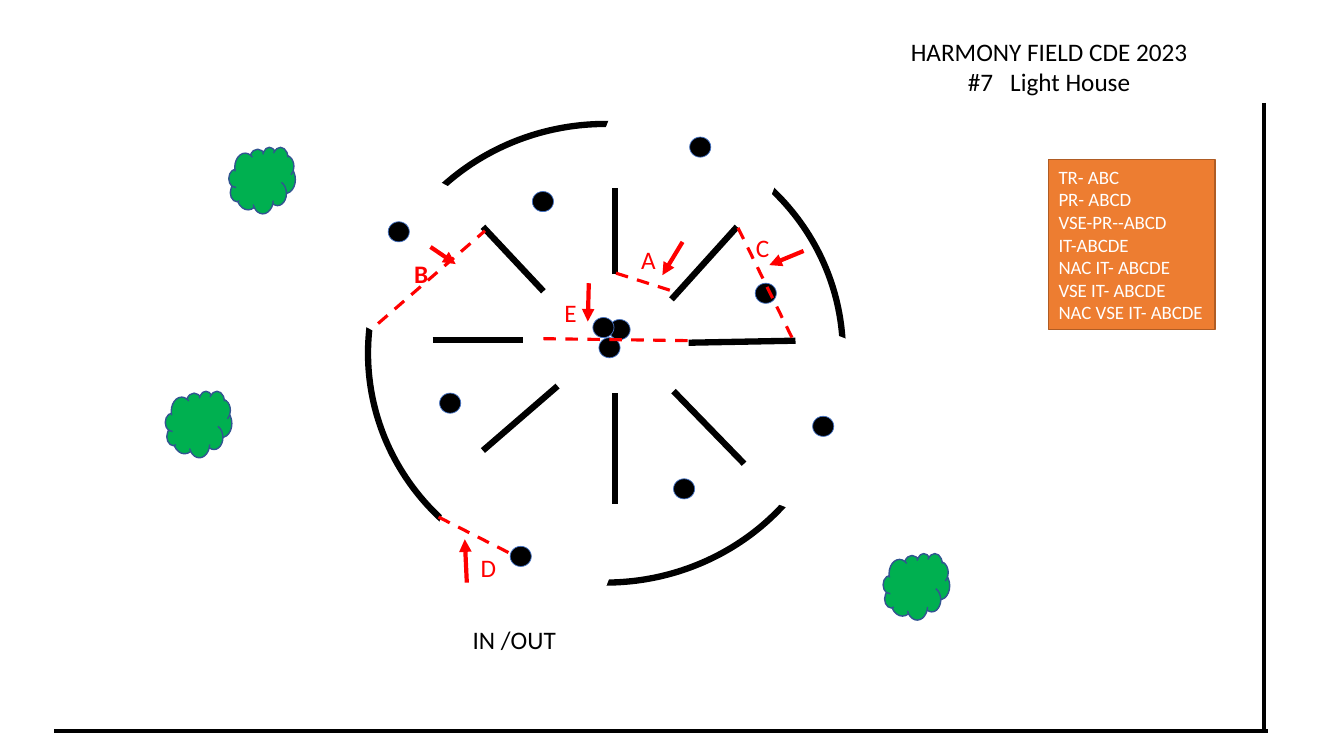
from dataclasses import dataclass

from lxml.etree import SubElement
from pptx import Presentation
from pptx.dml.color import RGBColor as RGB
from pptx.enum.dml import MSO_LINE
from pptx.enum.shapes import MSO_CONNECTOR as CONNECTOR
from pptx.enum.shapes import MSO_SHAPE as SHAPE
from pptx.enum.text import MSO_ANCHOR as ANCHOR
from pptx.enum.text import MSO_AUTO_SIZE as AUTO_SIZE
from pptx.enum.text import PP_ALIGN as ALIGN
from pptx.oxml.ns import qn
from pptx.util import Inches, Pt


@dataclass(frozen=True)
class Theme:
    font: str = "Calibri"
    black: RGB = RGB(0, 0, 0)
    white: RGB = RGB(255, 255, 255)
    red: RGB = RGB(255, 0, 0)
    green: RGB = RGB(0, 0xB0, 0x50)
    tree_edge: RGB = RGB(0x32, 0x54, 0x91)
    dot_edge: RGB = RGB(0x44, 0x72, 0xC4)
    orange: RGB = RGB(0xED, 0x7D, 0x31)
    orange_edge: RGB = RGB(0xAF, 0x5C, 0x24)
    label_size: float = 18
    class_size: float = 13.5


@dataclass(frozen=True)
class Box:
    left: float
    top: float
    width: float
    height: float

    def inside(self, x, y, width, height):
        return Box(self.left + x, self.top + y, width, height)

    def lengths(self):
        return [Inches(v) for v in (self.left, self.top, self.width, self.height)]


THEME = Theme()
WALLS = [
    (3.33, 2.4, 4.39, 2.38), (1.29, 3.47, 2.03, 2.83),
    (1.29, 1.25, 1.89, 1.89), (3.18, 2.88, 3.88, 3.6),
    (3.16, 1.97, 3.81, 1.25), (2.6, 1.72, 2.6, 0.87),
    (0.79, 2.37, 1.69, 2.37), (2.6, 2.9, 2.6, 4),
]
DOTS = [
    (0.97, 3), (4.1, 1.91), (2.55, 2.45), (2.65, 2.27), (2.49, 2.25), (1.89, 1),
    (1.67, 4.52), (4.67, 3.23), (3.29, 3.85), (0.46, 1.3), (3.45, 0.46),
]
RING_GAPS = [
    (SHAPE.ARC, (3.54, -0.52, 0.89, 3.36), 302.9, 6),
    (SHAPE.ARC, (1, 0.26, 3.12, 1.54), 0, 6),
    (SHAPE.RECTANGLE, (2.46, 0.39, 1.76, 0.37), 21.4, 1),
    (SHAPE.RECTANGLE, (0.81, 4.3, 1.76, 0.37), 21.4, 1),
    (SHAPE.RECTANGLE, (3.76, 3.03, 1.76, 0.37), 111.1, 1),
    (SHAPE.RECTANGLE, (-0.3, 1.34, 1.6, 0.37), 298.4, 1),
]
GATES = [
    ("A", (2.76, 1.37), (2.61, 1.71, 3.21, 1.9), (3.27, 1.4, 3.07, 1.73)),
    ("B", (0.51, 1.51), (0.25, 2.21, 1.31, 1.29), (0.77, 1.45, 1.02, 1.62)),
    ("C", (3.9, 1.26), (3.82, 1.26, 4.38, 2.4), (4.47, 1.49, 4.13, 1.63)),
    ("D", (1.17, 4.43), (0.85, 4.13, 1.58, 4.5), (1.13, 4.78, 1.11, 4.35)),
    ("E", (2, 1.9), (1.89, 2.36, 3.37, 2.38), (2.34, 1.81, 2.33, 2.19)),
]
CLASSES = [
    "TR- ABC", "PR- ABCD", "VSE-PR--ABCD", "IT-ABCDE",
    "NAC IT- ABCDE", "VSE IT- ABCDE", "NAC VSE IT- ABCDE",
]


def write(frame, lines, size, color, align=ALIGN.LEFT, bold=False):
    frame.word_wrap = False
    for index, line in enumerate(lines):
        paragraph = frame.add_paragraph() if index else frame.paragraphs[0]
        paragraph.alignment = align
        run = paragraph.add_run()
        run.text = line
        run.font.name = THEME.font
        run.font.size = Pt(size)
        run.font.bold = bold
        run.font.color.rgb = color


def draw_shape(slide, kind, box, fill, edge, weight, rotation=0):
    shape = slide.shapes.add_shape(kind, *box.lengths())
    shape.shadow.inherit = False
    shape.rotation = rotation
    if fill is None:
        shape.fill.background()
    else:
        shape.fill.solid()
        shape.fill.fore_color.rgb = fill
    shape.line.color.rgb = edge
    shape.line.width = Pt(weight)
    return shape


def draw_line(slide, box, ends, color, weight, dashed=False, arrow=False):
    x1, y1, x2, y2 = ends
    line = slide.shapes.add_connector(
        CONNECTOR.STRAIGHT,
        Inches(box.left + x1), Inches(box.top + y1),
        Inches(box.left + x2), Inches(box.top + y2))
    line.line.color.rgb = color
    line.line.width = Pt(weight)
    if dashed:
        line.line.dash_style = MSO_LINE.DASH
    properties = line._element.spPr
    if arrow:
        SubElement(properties.find(qn("a:ln")), qn("a:tailEnd"), type="triangle")
    SubElement(properties, qn("a:effectLst"))


def draw_label(slide, box, text, color, bold=False):
    label = slide.shapes.add_textbox(*box.lengths())
    label.text_frame.auto_size = AUTO_SIZE.SHAPE_TO_FIT_TEXT
    write(label.text_frame, [text], THEME.label_size, color, bold=bold)


def place_heading(slide, box):
    heading = slide.shapes.title
    heading.left, heading.top, heading.width, heading.height = box.lengths()
    heading.text_frame.vertical_anchor = ANCHOR.TOP
    write(heading.text_frame, ["HARMONY FIELD CDE 2023", "#7   Light House"],
          THEME.label_size, THEME.black, ALIGN.CENTER)


def draw_obstacle(slide, box):
    draw_shape(slide, SHAPE.OVAL, box.inside(0.15, 0.23, 4.71, 4.55),
               THEME.white, THEME.black, 4.5)
    for kind, place, rotation, weight in RING_GAPS:
        fill = None if kind == SHAPE.ARC else THEME.white
        draw_shape(slide, kind, box.inside(*place), fill, THEME.white, weight, rotation)
    for x, y in DOTS:
        draw_shape(slide, SHAPE.OVAL, box.inside(x - 0.11, y - 0.1, 0.21, 0.2),
                   THEME.black, THEME.dot_edge, 0.5)
    for wall in WALLS:
        draw_line(slide, box, wall, THEME.black, 4.5)
    for letter, corner, opening, direction in GATES:
        draw_line(slide, box, opening, THEME.red, 2.25, dashed=True)
        draw_line(slide, box, direction, THEME.red, 3, arrow=True)
        draw_label(slide, box.inside(*corner, 0.34, 0.4), letter, THEME.red,
                   bold=letter == "B")
    draw_label(slide, box.inside(1.09, 5.14, 1.04, 0.4), "IN /OUT", THEME.black)


def draw_classes(slide, box):
    panel = draw_shape(slide, SHAPE.RECTANGLE, box, THEME.orange, THEME.orange_edge, 1)
    panel.text_frame.vertical_anchor = ANCHOR.MIDDLE
    write(panel.text_frame, CLASSES, THEME.class_size, THEME.white)


def draw_field(slide, box):
    draw_line(slide, box, (0, box.height, box.width, box.height), THEME.black, 3)
    draw_line(slide, box, (box.width - 0.04, 0, box.width - 0.04, box.height),
              THEME.black, 3)
    for x, y in [(8.22, 4.47), (1.73, 0.44), (1.1, 2.86)]:
        draw_shape(slide, SHAPE.CLOUD, box.inside(x, y, 0.66, 0.66),
                   THEME.green, THEME.tree_edge, 1)


def main():
    deck = Presentation()
    deck.slide_width, deck.slide_height = Inches(13.33), Inches(7.5)
    slide = deck.slides.add_slide(deck.slide_layouts[5])
    place_heading(slide, Box(8.91, 0.31, 2.99, 0.71))
    draw_obstacle(slide, Box(3.5, 1, 5.2, 5.6))
    draw_field(slide, Box(0.54, 1.02, 12.04, 6.23))
    draw_classes(slide, Box(10.4, 1.58, 1.65, 1.69))
    deck.save("out.pptx")


if __name__ == "__main__":
    main()
